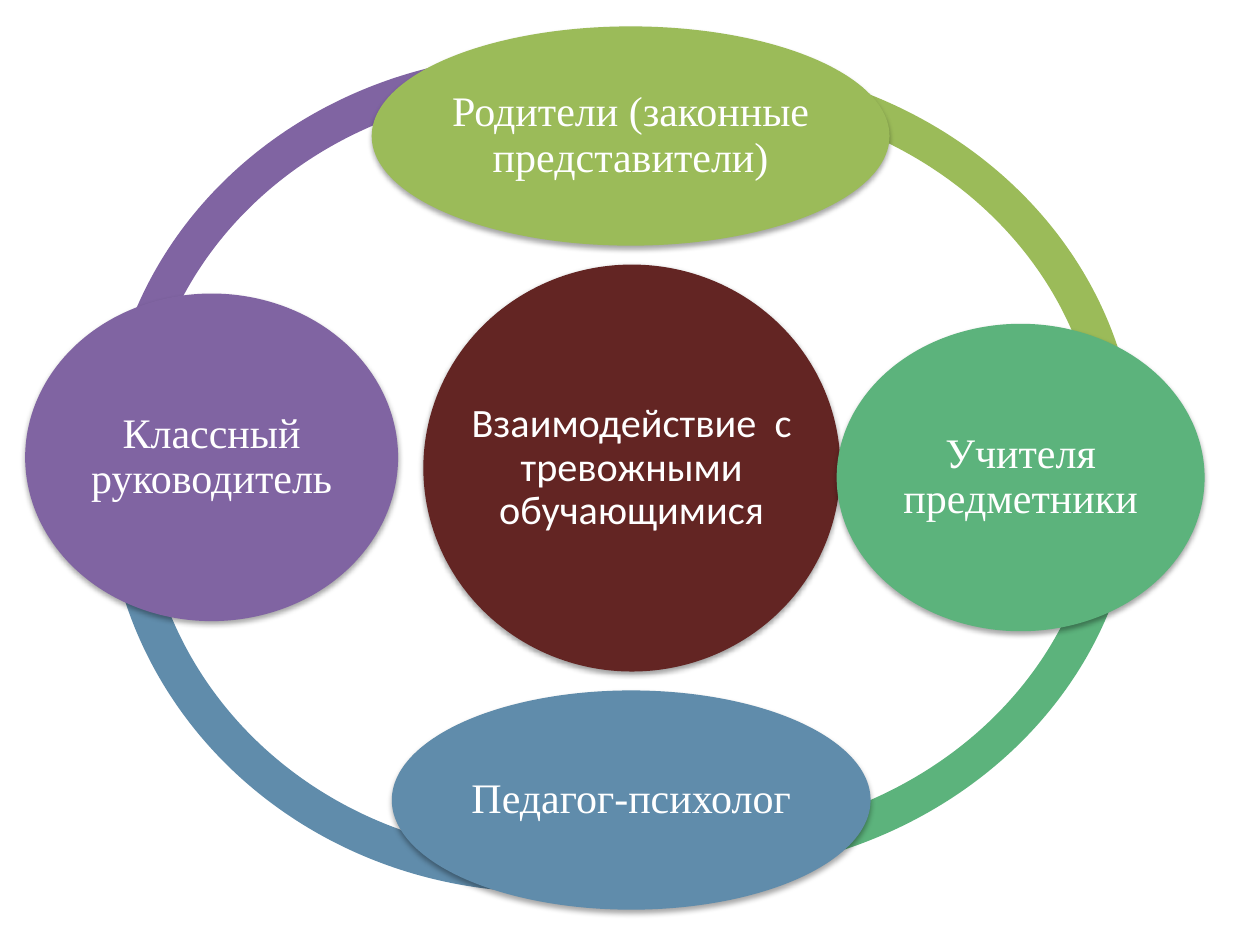
import pptx
import pptx.util
import pptx.dml.color
import pptx.enum.shapes
import pptx.enum.text
import pptx.oxml
import pptx.oxml.ns

RGB = pptx.dml.color.RGBColor
SHAPE = pptx.enum.shapes.MSO_SHAPE

PLUM = RGB(0x80, 0x64, 0xA2)
BLUE = RGB(0x60, 0x8C, 0xAB)
GREEN = RGB(0x5C, 0xB3, 0x7C)
LIME = RGB(0x9B, 0xBB, 0x59)
WINE = RGB(0x63, 0x25, 0x23)
WHITE = RGB(0xFF, 0xFF, 0xFF)

COLS, ROWS = 100, 75
BAND = 0.046  # ring thickness as a share of the arc's shorter side
PAD = pptx.util.Inches(0.03)

SHADOW = (
    '<a:effectLst {ns}><a:outerShdw blurRad="{blur}" dist="{dist}" '
    'dir="5400000" rotWithShape="0"><a:srgbClr val="000000">'
    '<a:alpha val="{alpha}"/></a:srgbClr></a:outerShdw></a:effectLst>'
)


class Board:
    """Holds the style and the slide; boxes are (column, row, columns, rows)."""

    def __init__(self, deck):
        self.slide = deck.slides.add_slide(deck.slide_layouts[6])
        self.col = deck.slide_width / COLS
        self.row = deck.slide_height / ROWS

    def place(self, box):
        steps = (self.col, self.row, self.col, self.row)
        return [round(n * step) for n, step in zip(box, steps)]

    def shape(self, kind, box, fill):
        item = self.slide.shapes.add_shape(kind, *self.place(box))
        item.fill.solid()
        item.fill.fore_color.rgb = fill
        item.line.fill.background()
        item.shadow.inherit = False
        return item

    def arc(self, box, start, end, fill):
        """Draw a ring part between two angles in degrees."""
        item = self.shape(SHAPE.BLOCK_ARC, box, fill)
        # One adjustment unit is 100000/60000 of a degree
        item.adjustments[0] = start * 0.6
        item.adjustments[1] = end * 0.6
        item.adjustments[2] = BAND

    def shade(self, item, dist, alpha):
        props = item._element.spPr
        props.remove(props.find(pptx.oxml.ns.qn("a:effectLst")))
        props.append(pptx.oxml.parse_xml(SHADOW.format(
            ns=pptx.oxml.ns.nsdecls("a"), blur=pptx.util.Pt(3.1),
            dist=pptx.util.Pt(dist), alpha=alpha * 1000)))

    def label(self, box, text, size, font):
        frame = self.slide.shapes.add_textbox(*self.place(box)).text_frame
        frame.word_wrap = True
        frame.vertical_anchor = pptx.enum.text.MSO_ANCHOR.MIDDLE
        frame.margin_left = frame.margin_right = PAD
        frame.margin_top = frame.margin_bottom = PAD
        frame.text = text
        para = frame.paragraphs[0]
        para.alignment = pptx.enum.text.PP_ALIGN.CENTER
        para.line_spacing = 0.9
        style = para.runs[0].font
        style.size = pptx.util.Pt(size)
        style.name = font
        style.color.rgb = WHITE

    def node(self, box, text, fill, size=24, font="Times New Roman",
             dist=1.8, alpha=35):
        """Draw a shaded ellipse; its label spans the full box to wrap wide."""
        self.shade(self.shape(SHAPE.OVAL, box, fill), dist, alpha)
        self.label(box, text, size, font)


def main():
    deck = pptx.Presentation()
    deck.slide_width = pptx.util.Inches(10)
    deck.slide_height = pptx.util.Inches(7.5)
    board = Board(deck)

    board.arc((8.4, 4.3, 69.3, 63.8), 179.66, 285.39, PLUM)
    board.arc((8.4, 5.4, 69.3, 65.4), 74.48, 183.8, BLUE)
    board.arc((19.3, 5.6, 70.9, 63.8), 0.82, 100.11, GREEN)
    board.arc((19.3, 4.8, 70.9, 63.8), 259.83, 2.61, LIME)

    board.node((33.6, 21, 33.1, 32.3),
               "Взаимодействие  с тревожными обучающимися", WINE,
               size=23, font="Calibri", dist=1.6, alpha=38)
    board.node((29.5, 2.1, 41.1, 17.4),
               "Родители (законные представители)", LIME)
    board.node((66.4, 25.7, 29.2, 24.4), "Учителя предметники", GREEN)
    board.node((31.1, 54.8, 38, 17.4), "Педагог-психолог", BLUE)
    board.node((2, 23.3, 29.6, 26), "Классный руководитель", PLUM)

    deck.save("out.pptx")


if __name__ == "__main__":
    main()
